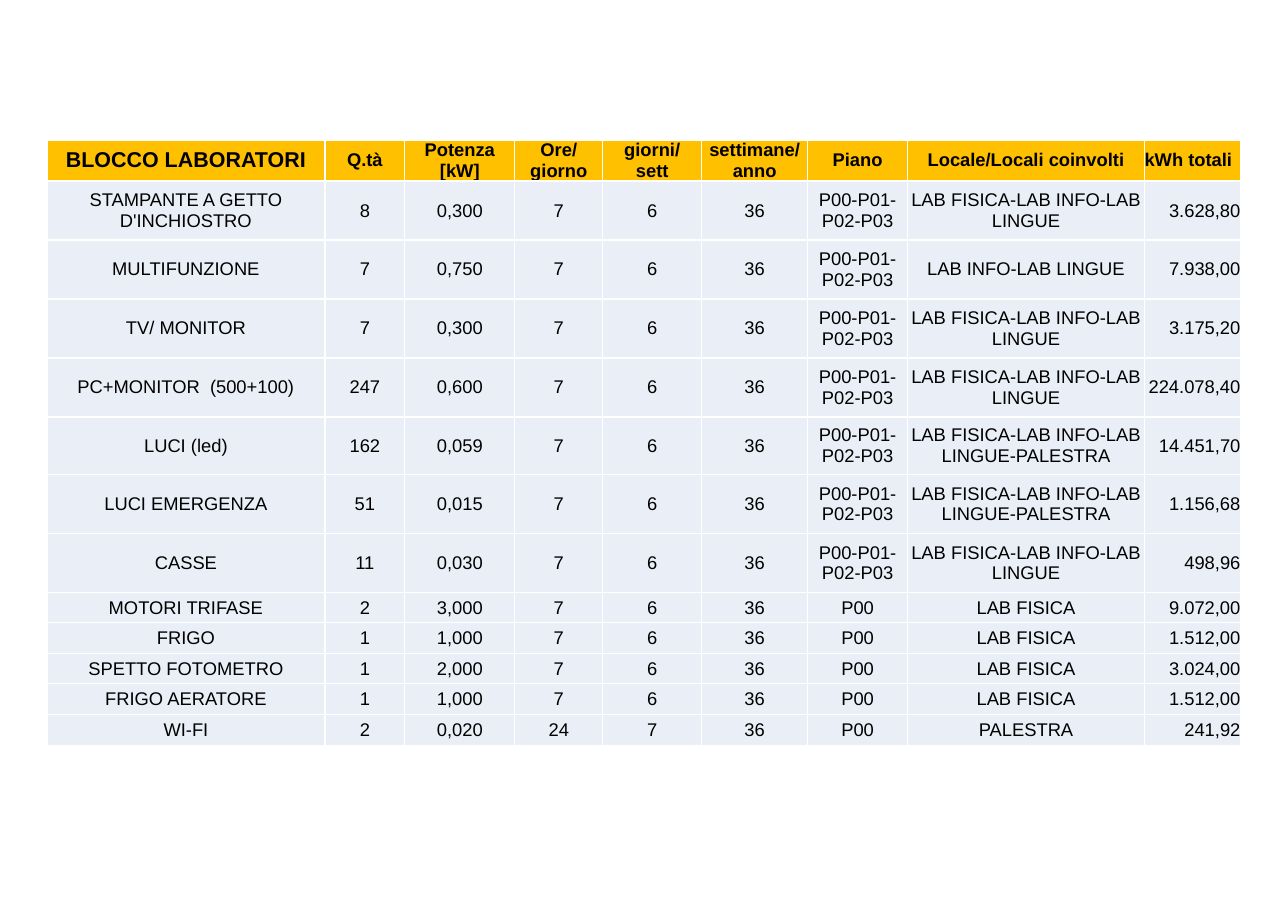
from lxml import etree
from pptx import Presentation
from pptx import util as u
from pptx.dml.color import RGBColor
from pptx.enum import text
from pptx.oxml.ns import qn

# Content
HEADER = ["BLOCCO LABORATORI", "Q.tà", "Potenza\n[kW]", "Ore/\ngiorno", "giorni/\nsett",
          "settimane/\nanno", "Piano", "Locale/Locali coinvolti", "kWh totali"]
FLOORS = "P00-P01-P02-P03"
LABS = "LAB FISICA-LAB INFO-LAB LINGUE"
LABS_GYM = LABS + "-PALESTRA"
ROWS = [
    ("STAMPANTE A GETTO D'INCHIOSTRO", "8", "0,300", "7", "6", "36", FLOORS, LABS, "3.628,80"),
    ("MULTIFUNZIONE", "7", "0,750", "7", "6", "36", FLOORS, "LAB INFO-LAB LINGUE", "7.938,00"),
    ("TV/ MONITOR", "7", "0,300", "7", "6", "36", FLOORS, LABS, "3.175,20"),
    ("PC+MONITOR  (500+100)", "247", "0,600", "7", "6", "36", FLOORS, LABS, "224.078,40"),
    ("LUCI (led)", "162", "0,059", "7", "6", "36", FLOORS, LABS_GYM, "14.451,70"),
    ("LUCI EMERGENZA", "51", "0,015", "7", "6", "36", FLOORS, LABS_GYM, "1.156,68"),
    ("CASSE", "11", "0,030", "7", "6", "36", FLOORS, LABS, "498,96"),
    ("MOTORI TRIFASE", "2", "3,000", "7", "6", "36", "P00", "LAB FISICA", "9.072,00"),
    ("FRIGO", "1", "1,000", "7", "6", "36", "P00", "LAB FISICA", "1.512,00"),
    ("SPETTO FOTOMETRO", "1", "2,000", "7", "6", "36", "P00", "LAB FISICA", "3.024,00"),
    ("FRIGO AERATORE", "1", "1,000", "7", "6", "36", "P00", "LAB FISICA", "1.512,00"),
    ("WI-FI", "2", "0,020", "24", "7", "36", "P00", "PALESTRA", "241,92"),
]

# Layout in px
LEFT, TOP = 47, 140
COL_WIDTHS = [278, 80, 110, 88, 99, 106, 100, 237, 96]
ROW_HEIGHTS = [41, 59, 59, 59, 59, 58, 59, 59, 30, 31, 30, 31, 31]


def px(n):
    return u.Emu(round(n * 914400 / 110.2))


def rgb(value):
    return RGBColor.from_string(value)


def add_borders(cell, color):
    tc_pr = cell._tc.get_or_add_tcPr()
    for side in ("a:lnL", "a:lnR", "a:lnT", "a:lnB"):
        ln = etree.SubElement(tc_pr, qn(side), w=str(u.Pt(1)))
        fill = etree.SubElement(ln, qn("a:solidFill"))
        etree.SubElement(fill, qn("a:srgbClr"), val=color)


def fill_cell(cell, value, size, bold, align, color):
    add_borders(cell, "FFFFFF")
    cell.fill.solid()
    cell.fill.fore_color.rgb = rgb(color)
    cell.margin_left = cell.margin_right = cell.margin_top = cell.margin_bottom = 0
    cell.vertical_anchor = text.MSO_ANCHOR.MIDDLE
    cell.text_frame.text = value
    for p in cell.text_frame.paragraphs:
        p.alignment = align
        p.font.name, p.font.size, p.font.bold = "Arial", u.Pt(size), bold
        p.font.color.rgb = rgb("000000")


prs = Presentation()
prs.slide_width, prs.slide_height = u.Inches(11.69), u.Inches(8.27)
s = prs.slides.add_slide(prs.slide_layouts[6])

# Table grid
table = s.shapes.add_table(len(ROW_HEIGHTS), len(COL_WIDTHS), px(LEFT), px(TOP),
                           px(sum(COL_WIDTHS)), px(sum(ROW_HEIGHTS))).table
for col, width in zip(table.columns, COL_WIDTHS):
    col.width = px(width)
for row, height in zip(table.rows, ROW_HEIGHTS):
    row.height = px(height)

# Cells: the energy column is left-aligned in the header, right-aligned below
last = len(HEADER) - 1
for i, values in enumerate([HEADER, *ROWS]):
    head = i == 0
    edge = text.PP_ALIGN.LEFT if head else text.PP_ALIGN.RIGHT
    for j, value in enumerate(values):
        fill_cell(table.cell(i, j), value,
                  size=14 if head and j == 0 else 12,
                  bold=head,
                  align=edge if j == last else text.PP_ALIGN.CENTER,
                  color="FFC000" if head else "EAEFF7")

prs.save("out.pptx")
